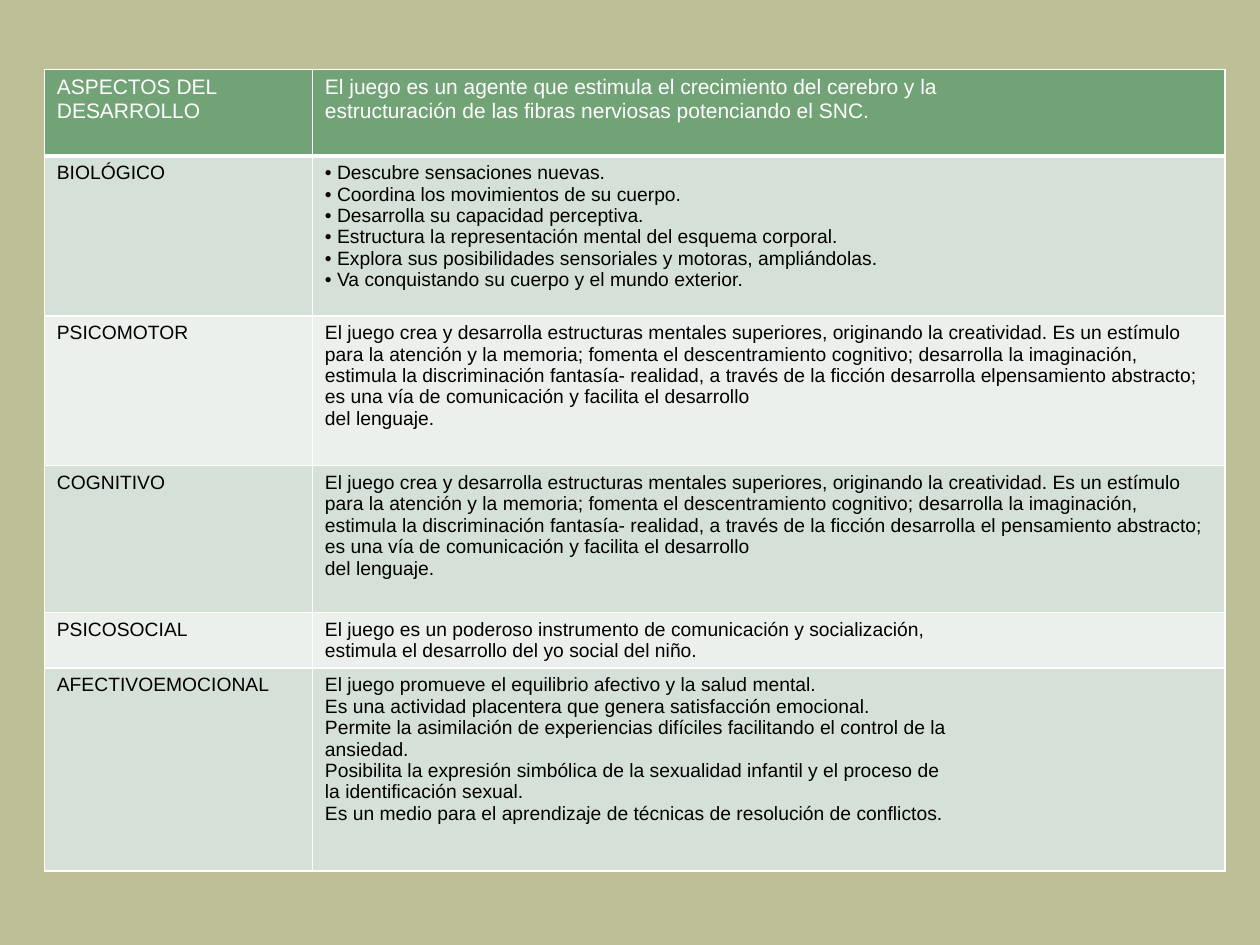
import pptx
import pptx.util
import pptx.dml.color
import pptx.enum.shapes
import pptx.oxml
import pptx.oxml.ns

Pt = pptx.util.Pt

COLORS = {
    "background": "BDC097",
    "header": "72A376",
    "odd_row": "D5E0D6",
    "even_row": "EBF0EC",
    "border": "FFFFFF",
    "header_text": "FFFFFF",
    "body_text": "000000",
}

MENTAL_STRUCTURES = (
    "El juego crea y desarrolla estructuras mentales superiores, originando la creatividad. "
    "Es un estímulo para la atención y la memoria; fomenta el descentramiento cognitivo; "
    "desarrolla la imaginación, estimula la discriminación fantasía- realidad, a través de "
    "la ficción desarrolla {} abstracto; es una vía de comunicación y facilita el desarrollo"
)

ASPECTS = [
    (49.5, ["ASPECTOS DEL", "DESARROLLO"], [
        "El juego es un agente que estimula el crecimiento del cerebro y la",
        "estructuración de las fibras nerviosas potenciando el SNC.",
    ]),
    (91.5, ["BIOLÓGICO"], [
        "• Descubre sensaciones nuevas.",
        "• Coordina los movimientos de su cuerpo.",
        "• Desarrolla su capacidad perceptiva.",
        "• Estructura la representación mental del esquema corporal.",
        "• Explora sus posibilidades sensoriales y motoras, ampliándolas.",
        "• Va conquistando su cuerpo y el mundo exterior.",
    ]),
    (85.5, ["PSICOMOTOR"], [MENTAL_STRUCTURES.format("elpensamiento"), "del lenguaje."]),
    (84, ["COGNITIVO"], [MENTAL_STRUCTURES.format("el pensamiento"), "del lenguaje."]),
    (31.5, ["PSICOSOCIAL"], [
        "El juego es un poderoso instrumento de comunicación y socialización,",
        "estimula el desarrollo del yo social del niño.",
    ]),
    (116, ["AFECTIVOEMOCIONAL"], [
        "El juego promueve el equilibrio afectivo y la salud mental.",
        "Es una actividad placentera que genera satisfacción emocional.",
        "Permite la asimilación de experiencias difíciles facilitando el control de la",
        "ansiedad.",
        "Posibilita la expresión simbólica de la sexualidad infantil y el proceso de",
        "la identificación sexual.",
        "Es un medio para el aprendizaje de técnicas de resolución de conflictos.",
    ]),
]

SLIDE_WIDTH, SLIDE_HEIGHT = 720, 540
TABLE_LEFT, TABLE_TOP = 25.3, 39.6
COLUMN_WIDTHS = (153.2, 521.6)


def rgb(name):
    return pptx.dml.color.RGBColor.from_string(COLORS[name])


def paint(fill, color):
    fill.solid()
    fill.fore_color.rgb = rgb(color)


def write(frame, lines, *, size, color, font="Arial"):
    frame.word_wrap = True
    frame.text = "\n".join(lines)
    for paragraph in frame.paragraphs:
        for run in paragraph.runs:
            run.font.name = font
            run.font.size = Pt(size)
            run.font.color.rgb = rgb(color)


def add_borders(cell, bottom):
    properties = cell._tc.get_or_add_tcPr()
    for side, width in (("L", 1), ("R", 1), ("T", 1), ("B", bottom)):
        properties.append(pptx.oxml.parse_xml(
            f'<a:ln{side} {pptx.oxml.ns.nsdecls("a")} w="{Pt(width)}"><a:solidFill>'
            f'<a:srgbClr val="{COLORS["border"]}"/></a:solidFill></a:ln{side}>'
        ))


def main():
    deck = pptx.Presentation()
    deck.slide_width, deck.slide_height = Pt(SLIDE_WIDTH), Pt(SLIDE_HEIGHT)
    slide = deck.slides.add_slide(deck.slide_layouts[6])

    backdrop = slide.shapes.add_shape(
        pptx.enum.shapes.MSO_SHAPE.RECTANGLE, 0, 0, Pt(SLIDE_WIDTH), Pt(SLIDE_HEIGHT))
    backdrop.shadow.inherit = False
    paint(backdrop.fill, "background")
    backdrop.line.fill.background()

    table = slide.shapes.add_table(
        len(ASPECTS), len(COLUMN_WIDTHS), Pt(TABLE_LEFT), Pt(TABLE_TOP),
        Pt(sum(COLUMN_WIDTHS)), Pt(sum(height for height, *_ in ASPECTS))).table
    for column, width in zip(table.columns, COLUMN_WIDTHS):
        column.width = Pt(width)

    for index, (height, *cell_texts) in enumerate(ASPECTS):
        is_header = index == 0
        row = table.rows[index]
        row.height = Pt(height)
        row_color = "header" if is_header else ("even_row", "odd_row")[index % 2]
        for cell, lines in zip(row.cells, cell_texts):
            add_borders(cell, bottom=3 if is_header else 1)
            paint(cell.fill, row_color)
            write(cell.text_frame, lines, size=12 if is_header else 11,
                  color="header_text" if is_header else "body_text")

    deck.save("out.pptx")


if __name__ == "__main__":
    main()
